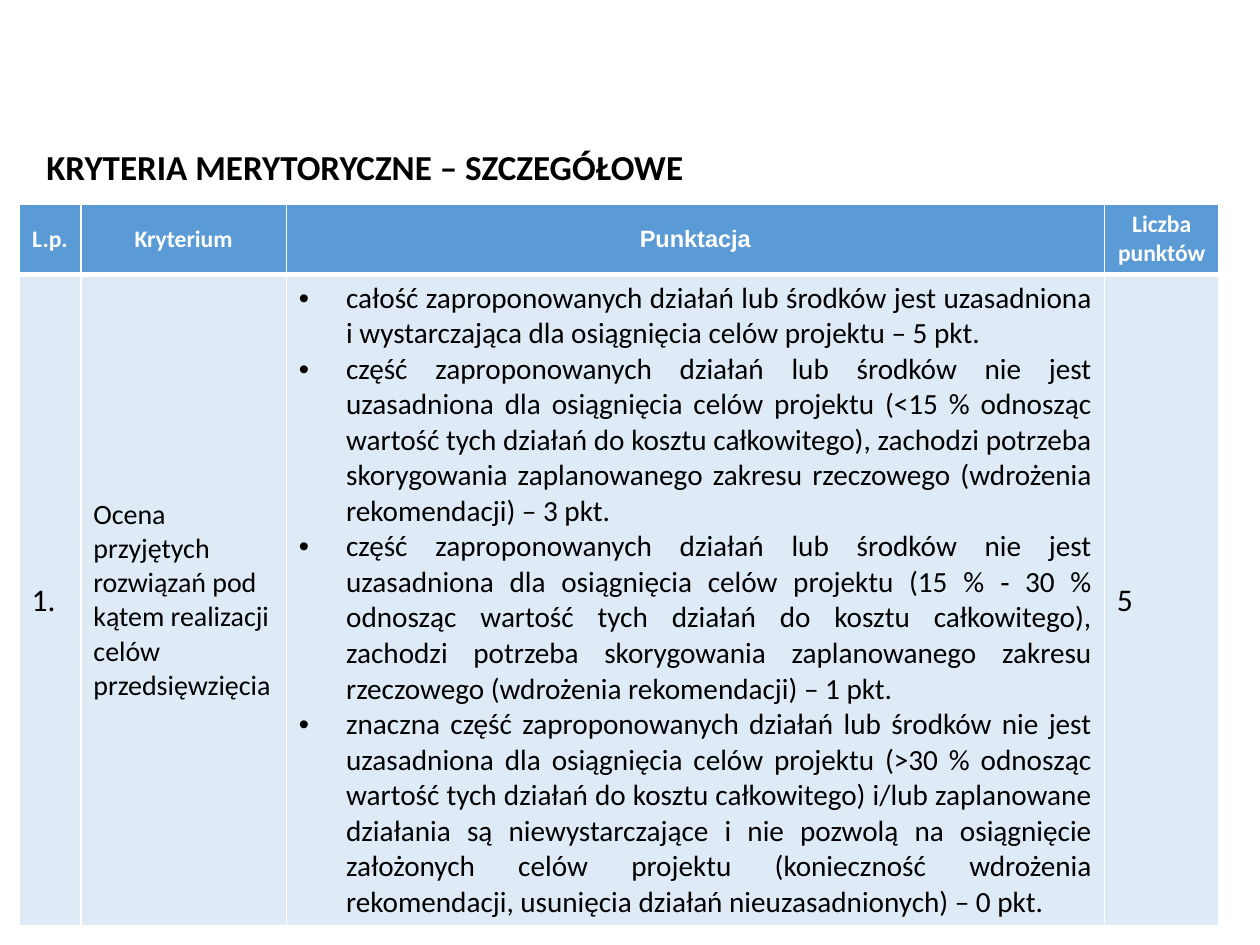
from lxml.etree import SubElement
from pptx import Presentation
from pptx.dml.color import RGBColor
from pptx.enum.text import MSO_ANCHOR, MSO_AUTO_SIZE, PP_ALIGN
from pptx.oxml import parse_xml
from pptx.oxml.ns import nsdecls, qn
from pptx.util import Pt

TITLE = "KRYTERIA MERYTORYCZNE – SZCZEGÓŁOWE"
HEADERS = [("L.p.", "Calibri"), ("Kryterium", "Calibri"),
           ("Punktacja", "Arial"), ("Liczba punktów", "Calibri")]
SCORES = [
    "całość zaproponowanych działań lub środków jest uzasadniona i wystarczająca "
    "dla osiągnięcia celów projektu – 5 pkt.",
    "część zaproponowanych działań lub środków nie jest uzasadniona dla osiągnięcia "
    "celów projektu (<15 % odnosząc wartość tych działań do kosztu całkowitego), "
    "zachodzi potrzeba skorygowania zaplanowanego zakresu rzeczowego "
    "(wdrożenia rekomendacji) – 3 pkt.",
    "część zaproponowanych działań lub środków nie jest uzasadniona dla osiągnięcia "
    "celów projektu (15 % ‐ 30 % odnosząc wartość tych działań do kosztu całkowitego), "
    "zachodzi potrzeba skorygowania zaplanowanego zakresu rzeczowego "
    "(wdrożenia rekomendacji) – 1 pkt.",
    "znaczna część zaproponowanych działań lub środków nie jest uzasadniona dla "
    "osiągnięcia celów projektu (>30 % odnosząc wartość tych działań do kosztu "
    "całkowitego) i/lub zaplanowane działania są niewystarczające i nie pozwolą na "
    "osiągnięcie założonych celów projektu (konieczność wdrożenia rekomendacji, "
    "usunięcia działań nieuzasadnionych) – 0 pkt.",
]
CRITERION = "Ocena przyjętych rozwiązań pod kątem realizacji celów przedsięwzięcia"
BODY = [(["1."], 18), ([CRITERION], 16), (SCORES, 16.7), (["5"], 18)]
COLUMN_WIDTHS = [35.3, 117.4, 467.5, 65.5]
ROW_HEIGHTS = [40, 372]
SCORE_COLUMN = 2
INDENT = Pt(27)


def color(value):
    return RGBColor.from_string(value)


def add_text(para, text, size, shade, font="Calibri", bold=False):
    span = para.add_run()
    span.text = text
    span.font.size = Pt(size)
    span.font.name = font
    span.font.bold = bold
    span.font.color.rgb = color(shade)


def add_bullet(para):
    properties = para._p.get_or_add_pPr()
    properties.set("marL", str(INDENT))
    properties.set("indent", str(-INDENT))
    SubElement(properties, qn("a:buFont"), typeface="Arial")
    SubElement(properties, qn("a:buChar"), char="•")
    tabs = SubElement(properties, qn("a:tabLst"))
    SubElement(tabs, qn("a:tab"), pos=str(Pt(36)), algn="l")


def style_cell(cell, fill, top, bottom):
    cell.vertical_anchor = MSO_ANCHOR.MIDDLE
    cell.fill.solid()
    cell.fill.fore_color.rgb = color(fill)
    borders = [("L", 1), ("R", 1), ("T", top), ("B", bottom)]
    for place, (side, width) in enumerate(borders):
        cell._tc.get_or_add_tcPr().insert(place, parse_xml(
            f'<a:ln{side} {nsdecls("a")} w="{Pt(width)}"><a:solidFill>'
            f'<a:srgbClr val="FFFFFF"/></a:solidFill></a:ln{side}>'))


def add_criteria_table(page):
    frame = page.shapes.add_table(
        len(ROW_HEIGHTS), len(COLUMN_WIDTHS), Pt(10.9), Pt(116.6),
        Pt(sum(COLUMN_WIDTHS)), Pt(sum(ROW_HEIGHTS)))
    table = frame.table
    for column, width in zip(table.columns, COLUMN_WIDTHS):
        column.width = Pt(width)
    for row, height in zip(table.rows, ROW_HEIGHTS):
        row.height = Pt(height)

    for index, (label, font) in enumerate(HEADERS):
        cell = table.cell(0, index)
        style_cell(cell, "5B9BD5", 1, 3)
        para = cell.text_frame.paragraphs[0]
        para.alignment = PP_ALIGN.CENTER
        add_text(para, label, 13.5, "FFFFFF", font, True)

    for index, (texts, size) in enumerate(BODY):
        cell = table.cell(1, index)
        style_cell(cell, "DEEBF7", 3, 1)
        for number, text in enumerate(texts):
            box = cell.text_frame
            para = box.add_paragraph() if number else box.paragraphs[0]
            if index == SCORE_COLUMN:
                para.alignment = PP_ALIGN.JUSTIFY
                add_bullet(para)
            add_text(para, text, size, "000000")


def add_title(page):
    box = page.shapes.add_textbox(Pt(19.4), Pt(79.2), Pt(381.6), Pt(31.7)).text_frame
    box.word_wrap = False
    box.auto_size = MSO_AUTO_SIZE.SHAPE_TO_FIT_TEXT
    box.vertical_anchor = MSO_ANCHOR.MIDDLE
    add_text(box.paragraphs[0], TITLE, 20, "000000", bold=True)


def main():
    deck = Presentation()
    deck.slide_width, deck.slide_height = Pt(720), Pt(540)
    page = deck.slides.add_slide(deck.slide_layouts[6])
    add_criteria_table(page)
    add_title(page)
    deck.save("out.pptx")


if __name__ == "__main__":
    main()
